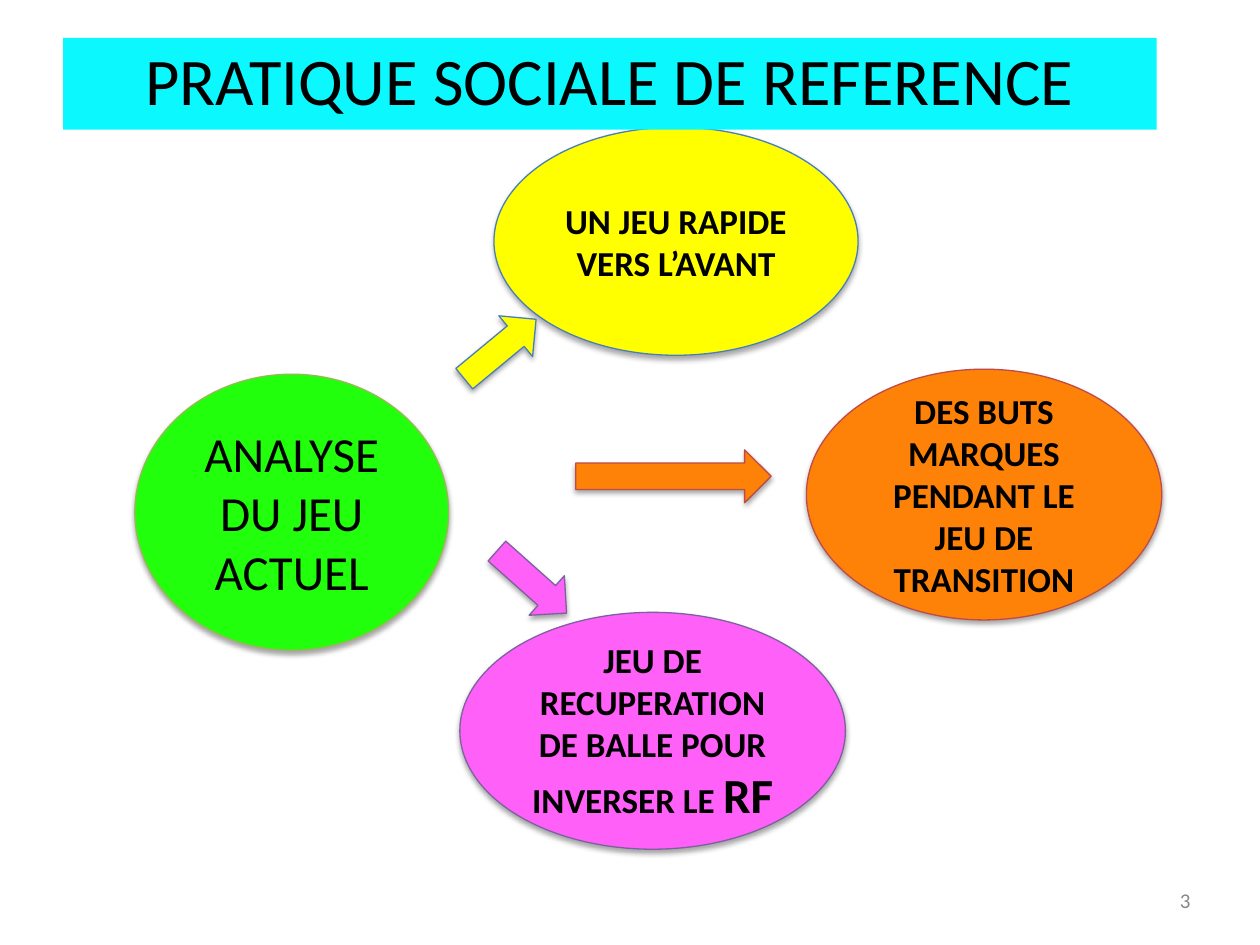
from lxml import etree
from pptx import Presentation
from pptx.dml import color
from pptx.enum import shapes, text
from pptx.oxml import ns
from pptx.util import Inches, Pt

COLOURS = {
    "title": "0CF8FF", "text": "000000", "number": "888888", "shadow": "000000",
    "green": "21FF0C", "green_line": "98B955",
    "yellow": "FFFF00", "yellow_line": "4A7EBB",
    "orange": "FF8208", "orange_line": "BE4B48",
    "pink": "FF60F8", "pink_line": "7D60A0",
}

IDEAS = [
    ("yellow", [("UN JEU RAPIDE VERS L’AVANT", 20)],
     (3.92, 1.01, 2.89, 1.81), (3.6, 2.56, 0.74, 0.42), 320.4),
    ("orange", [("DES BUTS MARQUES PENDANT LE JEU DE TRANSITION", 20)],
     (6.4, 2.93, 2.82, 1.99), (4.57, 3.57, 1.55, 0.42), 0),
    ("pink", [("JEU DE RECUPERATION DE BALLE POUR INVERSER LE ", 20), ("RF", 28)],
     (3.65, 4.86, 3.06, 1.88), (3.85, 4.41, 0.74, 0.42), 41.7),
]


def rgb(name):
    return color.RGBColor.from_string(COLOURS[name])


def add_shadow(shape):
    effects = shape._element.spPr.find(ns.qn("a:effectLst"))
    shadow = etree.SubElement(effects, ns.qn("a:outerShdw"), blurRad=str(Pt(3)),
                              dist=str(Pt(1.8)), dir="5400000", rotWithShape="0")
    shade = etree.SubElement(shadow, ns.qn("a:srgbClr"), val=COLOURS["shadow"])
    etree.SubElement(shade, ns.qn("a:alpha"), val="35000")


def add_shape(slide, kind, box, fill, line=None):
    shape = slide.shapes.add_shape(kind, *map(Inches, box))
    shape.shadow.inherit = False
    shape.fill.solid()
    shape.fill.fore_color.rgb = rgb(fill)
    if line:
        shape.line.color.rgb = rgb(line)
        shape.line.width = Pt(0.75)
        add_shadow(shape)
    else:
        shape.line.fill.background()
    return shape


def write(shape, parts, bold=False, colour="text",
          align=text.PP_ALIGN.CENTER, wrap=True):
    frame = shape.text_frame
    frame.word_wrap = wrap
    frame.vertical_anchor = text.MSO_ANCHOR.MIDDLE
    frame.margin_left = frame.margin_right = Inches(0.05)
    frame.margin_top = frame.margin_bottom = Inches(0.05)
    paragraph = frame.paragraphs[0]
    paragraph.alignment = align
    paragraph.font.name = "Calibri"
    paragraph.font.bold = bold
    paragraph.font.color.rgb = rgb(colour)
    if len(parts) == 1:
        paragraph.font.size = Pt(parts[0][1])
    for words, size in parts:
        run = paragraph.add_run()
        run.text = words
        if len(parts) > 1:
            run.font.size = Pt(size)
    return paragraph


def add_bubble(slide, box, colour, parts, bold):
    ellipse = add_shape(slide, shapes.MSO_SHAPE.OVAL, box, colour, colour + "_line")
    write(ellipse, parts, bold)


def add_idea(slide, colour, parts, bubble_box, arrow_box, angle):
    add_bubble(slide, bubble_box, colour, parts, True)
    arrow = add_shape(slide, shapes.MSO_SHAPE.RIGHT_ARROW, arrow_box,
                      colour, colour + "_line")
    arrow.rotation = angle


def add_title(slide, box):
    banner = add_shape(slide, shapes.MSO_SHAPE.RECTANGLE, box, "title")
    paragraph = write(banner, [("PRATIQUE SOCIALE DE REFERENCE", 38)])
    paragraph.line_spacing = 0.9


def add_page_number(slide, box):
    number = slide.shapes.add_textbox(*map(Inches, box))
    write(number, [("3", 12)], colour="number",
          align=text.PP_ALIGN.RIGHT, wrap=False)


def main():
    presentation = Presentation()
    presentation.slide_width = Inches(10)
    presentation.slide_height = Inches(7.5)
    slide = presentation.slides.add_slide(presentation.slide_layouts[6])
    add_bubble(slide, (1.07, 2.97, 2.49, 2.19), "green",
               [("ANALYSE DU JEU ACTUEL", 28)], False)
    for idea in IDEAS:
        add_idea(slide, *idea)
    add_page_number(slide, (9.3, 7, 0.2, 0.29))
    add_title(slide, (0.5, 0.3, 8.68, 0.73))
    presentation.save("out.pptx")


if __name__ == "__main__":
    main()
